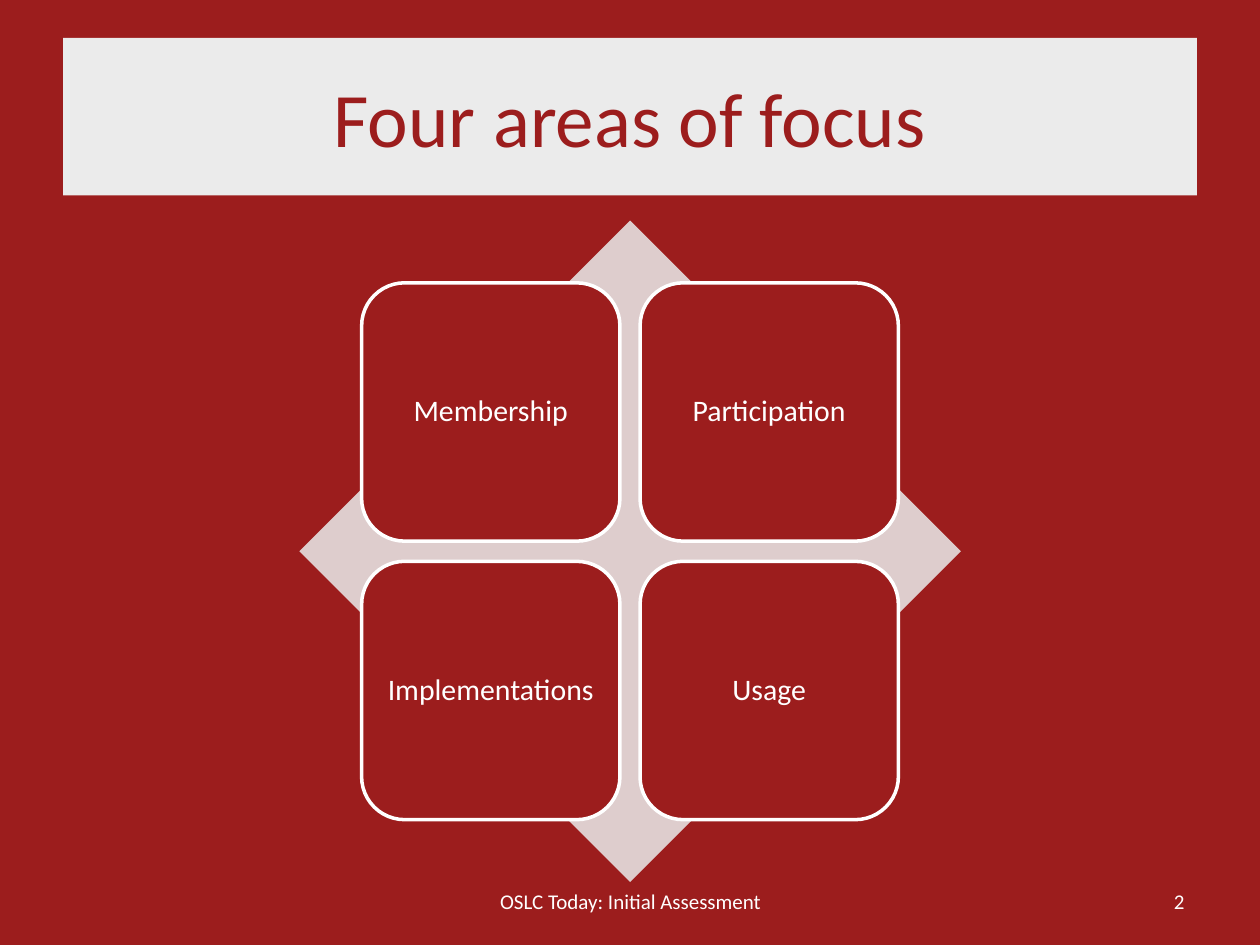
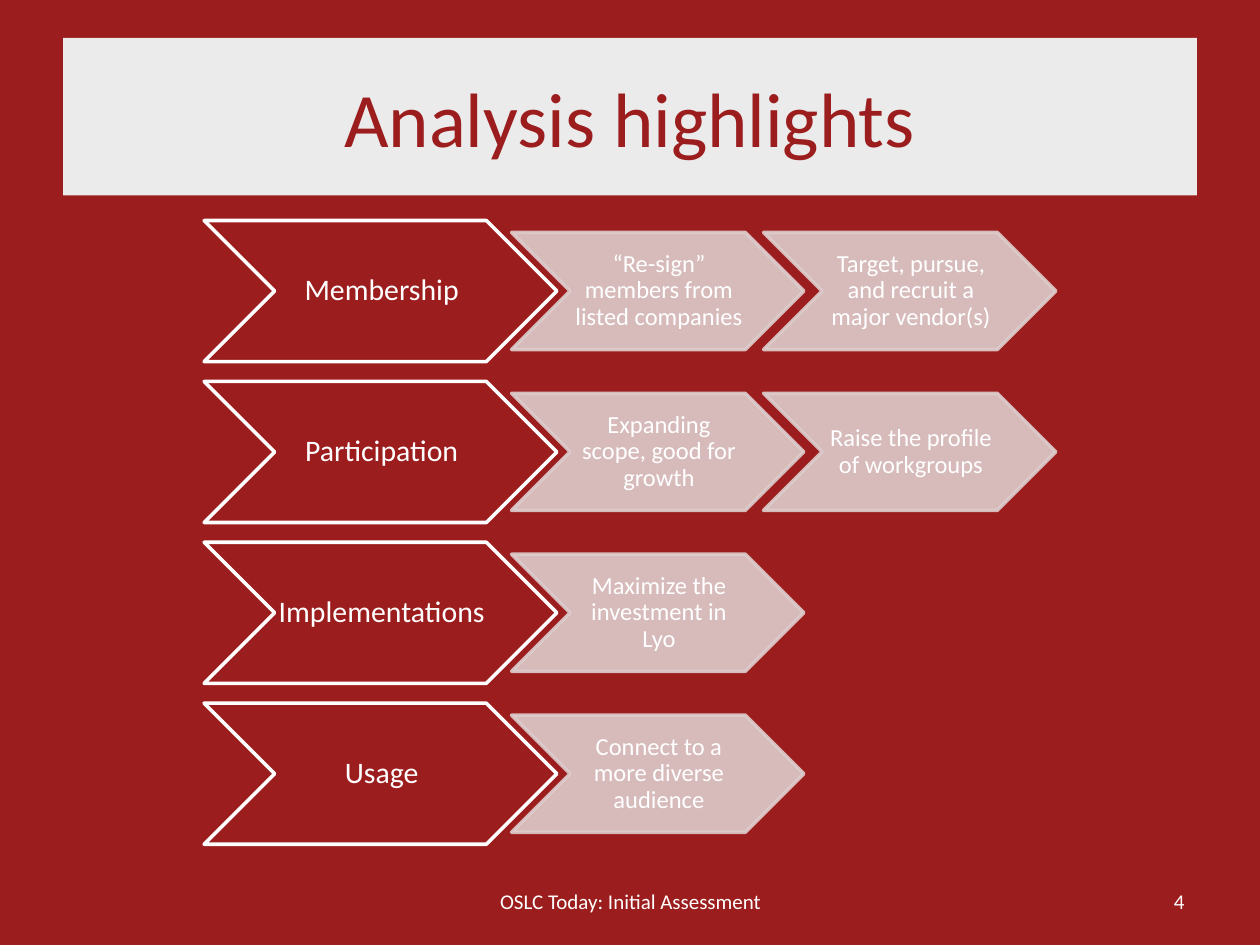
from lxml import etree
from pptx import Presentation
from pptx.dml.color import RGBColor
from pptx.enum import shapes, text
from pptx.oxml import ns
from pptx.util import Inches, Pt

RED = RGBColor(0x9C, 0x1D, 0x1D)
PALE_GRAY = RGBColor(0xEB, 0xEB, 0xEB)
PINK = RGBColor(0xDE, 0xCD, 0xCD)
WHITE = RGBColor(0xFF, 0xFF, 0xFF)
FONT = "Calibri"
FOOTER = "OSLC Today: Initial Assessment"
AREAS = ["Membership", "Participation", "Implementations", "Usage"]


def write(shape, content, size, color=WHITE, align=text.PP_ALIGN.CENTER,
          spacing=None, margins=(0.1, 0.05, 0.1, 0.05)):
    """Fill a shape with one formatted paragraph; margins are left, top, right, bottom."""
    frame = shape.text_frame
    frame.word_wrap = True
    frame.vertical_anchor = text.MSO_ANCHOR.MIDDLE
    frame.margin_left, frame.margin_top, frame.margin_right, frame.margin_bottom = map(Inches, margins)
    paragraph = frame.paragraphs[0]
    paragraph.text = content
    paragraph.alignment = align
    if spacing:
        paragraph.line_spacing = spacing
    paragraph.font.name = FONT
    paragraph.font.size = Pt(size)
    paragraph.font.color.rgb = color


def add_block(slide, kind, left, top, width, height, fill, line=None, opacity=None):
    """Add a preset shape without shadow; opacity is a percentage for fill and line."""
    shape = slide.shapes.add_shape(kind, Inches(left), Inches(top), Inches(width), Inches(height))
    shape.shadow.inherit = False
    shape.fill.solid()
    shape.fill.fore_color.rgb = fill
    if line is None:
        shape.line.fill.background()
    else:
        shape.line.color.rgb = line
        shape.line.width = Pt(2)
    if opacity:
        for color in shape.element.spPr.iter(ns.qn("a:srgbClr")):
            etree.SubElement(color, ns.qn("a:alpha"), val=str(opacity * 1000))
    return shape


presentation = Presentation()
presentation.slide_width = Inches(10)
presentation.slide_height = Inches(7.5)
background = presentation.slide_master.background.fill
background.solid()
background.fore_color.rgb = RED

# Title band, footer and slide number
slides = []
for heading, number in [("Four areas of focus", "2"), ("Analysis highlights", "4")]:
    slide = presentation.slides.add_slide(presentation.slide_layouts[5])
    title = slide.shapes.title
    title.left, title.top, title.width, title.height = map(Inches, (0.5, 0.3, 9, 1.25))
    title.fill.solid()
    title.fill.fore_color.rgb = PALE_GRAY
    write(title, heading, 44, color=RED)
    for content, left, width, align in [
        (FOOTER, 3.42, 3.17, text.PP_ALIGN.CENTER),
        (number, 7.17, 2.33, text.PP_ALIGN.RIGHT),
    ]:
        box = slide.shapes.add_textbox(Inches(left), Inches(6.95), Inches(width), Inches(0.4))
        write(box, content, 12, align=align)
    slides.append(slide)
focus_slide, highlights_slide = slides

# Four areas: a two-by-two grid centred on a diamond
DIAMOND_SIZE, TILE_SIZE, TILE_GAP = 5.25, 2.05, 0.16
CENTER_X, CENTER_Y = 5, 4.375
GRID_SIZE = 2 * TILE_SIZE + TILE_GAP
add_block(focus_slide, shapes.MSO_SHAPE.DIAMOND, CENTER_X - DIAMOND_SIZE / 2,
          CENTER_Y - DIAMOND_SIZE / 2, DIAMOND_SIZE, DIAMOND_SIZE, PINK)
for index, area in enumerate(AREAS):
    row, column = divmod(index, 2)
    tile = add_block(focus_slide, shapes.MSO_SHAPE.ROUNDED_RECTANGLE,
                     CENTER_X - GRID_SIZE / 2 + column * (TILE_SIZE + TILE_GAP),
                     CENTER_Y - GRID_SIZE / 2 + row * (TILE_SIZE + TILE_GAP),
                     TILE_SIZE, TILE_SIZE, RED, line=WHITE)
    write(tile, area, 17, spacing=0.9, margins=(0.07, 0.07, 0.07, 0.07))

# Highlights: one row of chevrons per area
HIGHLIGHTS = [
    ["“Re-sign” members from listed companies", "Target, pursue, and recruit a major vendor(s)"],
    ["Expanding scope, good for growth", "Raise the profile of workgroups"],
    ["Maximize the investment in Lyo"],
    ["Connect to a more diverse audience"],
]
AREA_HEIGHT, STEP_HEIGHT = 1.12, 0.93
ROW_PITCH = 1.14 * AREA_HEIGHT
CHEVRON_MARGINS = (0.02, 0.01, 0, 0.01)
for row, (area, steps) in enumerate(zip(AREAS, HIGHLIGHTS)):
    top = 1.75 + row * ROW_PITCH
    chevron = add_block(highlights_slide, shapes.MSO_SHAPE.CHEVRON, 1.62, top, 2.8, AREA_HEIGHT,
                        RED, line=WHITE)
    write(chevron, area, 17, spacing=0.9, margins=CHEVRON_MARGINS)
    for column, step in enumerate(steps):
        chevron = add_block(highlights_slide, shapes.MSO_SHAPE.CHEVRON, 4.06 + 2 * column,
                            top + (AREA_HEIGHT - STEP_HEIGHT) / 2, 2.32, STEP_HEIGHT,
                            PINK, line=PINK, opacity=90)
        write(chevron, step, 14, spacing=0.9, margins=CHEVRON_MARGINS)

presentation.save("out.pptx")
